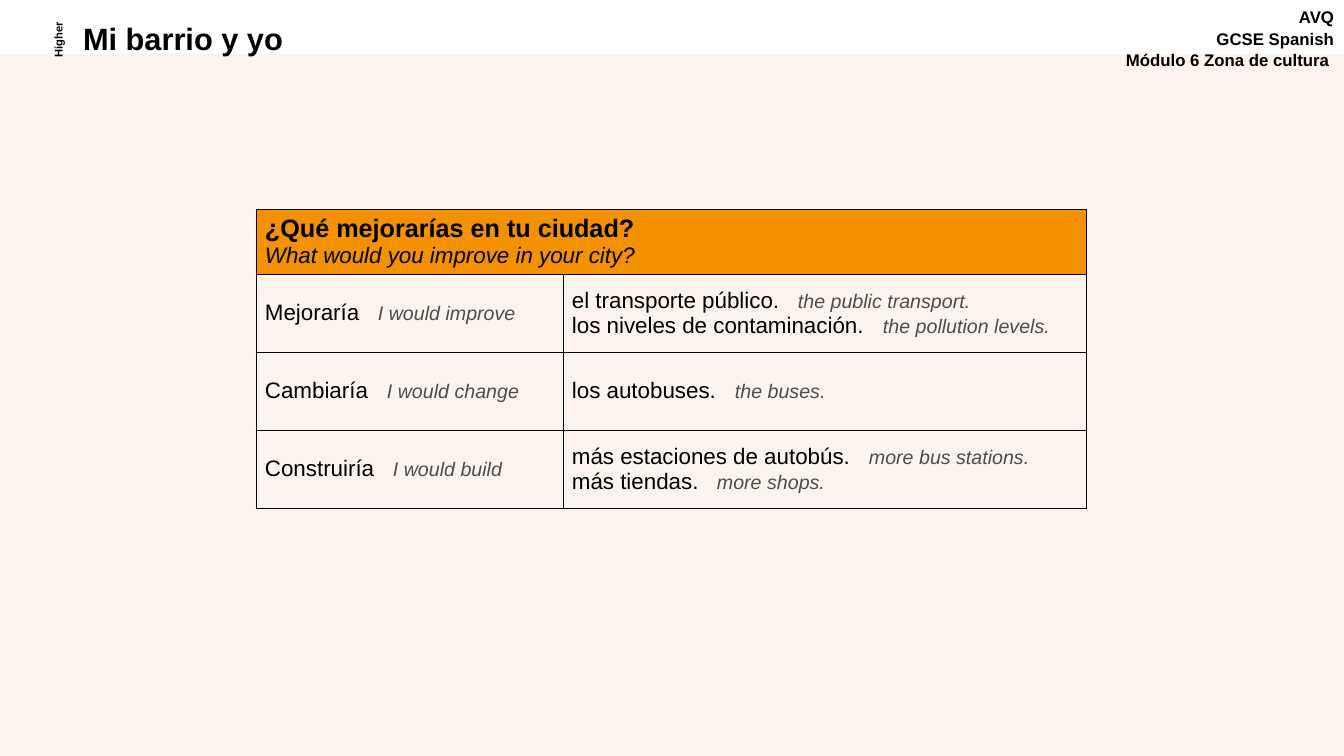
from lxml.etree import SubElement
from pptx import Presentation
from pptx.dml.color import RGBColor
from pptx.enum.shapes import MSO_SHAPE
from pptx.enum.text import MSO_ANCHOR, PP_ALIGN
from pptx.oxml.ns import qn
from pptx.util import Pt

EMU_PER_PX = 914400 / 100.8
BLACK, GREY, ORANGE, CREAM = "000000", "4D4D4C", "F39100", "FDF3ED"
TITLE = {"size": Pt(22), "bold": True}
COURSE = {"size": Pt(12), "bold": True}
TIER = {"size": Pt(8), "bold": True}
QUESTION = {"size": Pt(18), "bold": True}
QUESTION_ENGLISH = {"size": Pt(16), "bold": False, "italic": True}
SPANISH = {"size": Pt(16), "bold": False, "italic": False}
ENGLISH = {"size": Pt(14), "bold": False, "italic": True}

COLUMN_WIDTHS = [307, 524]
HEADER_HEIGHT, ROW_HEIGHT = 62, 78
HEADING = [
    ("¿Qué mejorarías en tu ciudad?", QUESTION),
    ("What would you improve in your city?", QUESTION_ENGLISH),
]
PHRASE_ROWS = [
    (
        [("Mejoraría", "I would improve", 113)],
        [
            ("el transporte público.", "the public transport.", 226),
            ("los niveles de contaminación.", "the pollution levels.", 311),
        ],
    ),
    (
        [("Cambiaría", "I would change", 122)],
        [("los autobuses.", "the buses.", 163)],
    ),
    (
        [("Construiría", "I would build", 128)],
        [
            ("más estaciones de autobús.", "more bus stations.", 297),
            ("más tiendas.", "more shops.", 145),
        ],
    ),
]


def px(length):
    return round(length * EMU_PER_PX)


def colour(hex_string):
    return RGBColor.from_string(hex_string)


def set_attributes(target, values):
    for name, value in values.items():
        setattr(target, name, value)


def place(shape, box):
    set_attributes(shape, dict(zip(("left", "top", "width", "height"), map(px, box))))


def add_run(paragraph, text, style, hex_string=BLACK):
    run = paragraph.add_run()
    run.text = text
    set_attributes(run.font, {"name": "Arial", **style})
    run.font.color.rgb = colour(hex_string)


def paragraphs_for(text_frame, items):
    for index, item in enumerate(items):
        paragraph = text_frame.add_paragraph() if index else text_frame.paragraphs[0]
        yield paragraph, item


def add_background(slide, box):
    panel = slide.shapes.add_shape(MSO_SHAPE.RECTANGLE, *map(px, box))
    panel.shadow.inherit = False
    panel.fill.solid()
    panel.fill.fore_color.rgb = colour(CREAM)
    panel.line.fill.background()
    panel.element.getparent().insert(2, panel.element)


def add_title(slide, box):
    title = slide.shapes.title
    place(title, box)
    set_attributes(title.text_frame, {"word_wrap": True, "vertical_anchor": MSO_ANCHOR.MIDDLE})
    paragraph = title.text_frame.paragraphs[0]
    set_attributes(paragraph, {"alignment": PP_ALIGN.LEFT, "line_spacing": 0.9})
    add_run(paragraph, "Mi barrio y yo", TITLE)


def add_label(slide, box, lines, style, alignment, rotation=0):
    label = slide.shapes.add_textbox(*map(px, box))
    label.rotation = rotation
    label.text_frame.word_wrap = True
    for paragraph, line in paragraphs_for(label.text_frame, lines):
        set_attributes(paragraph, {"alignment": alignment, "space_after": Pt(1)})
        add_run(paragraph, line, style)


def add_borders(cell):
    properties = cell._tc.get_or_add_tcPr()
    for side in ("lnL", "lnR", "lnT", "lnB"):
        line = SubElement(properties, qn(f"a:{side}"), w=str(Pt(0.75)))
        fill = SubElement(line, qn("a:solidFill"))
        SubElement(fill, qn("a:srgbClr"), val=BLACK)


def format_cell(cell, fill=None):
    margins = {"margin_left": px(9), "margin_right": px(9), "margin_top": px(4), "margin_bottom": px(4)}
    set_attributes(cell, {**margins, "vertical_anchor": MSO_ANCHOR.MIDDLE})
    add_borders(cell)
    if fill:
        cell.fill.solid()
        cell.fill.fore_color.rgb = colour(fill)
    else:
        cell.fill.background()


def add_tab_stop(paragraph, position):
    tab_list = SubElement(paragraph._p.get_or_add_pPr(), qn("a:tabLst"))
    SubElement(tab_list, qn("a:tab"), pos=str(px(position)), algn="l")


def fill_phrases(cell, phrases):
    for paragraph, (spanish, english, english_left) in paragraphs_for(cell.text_frame, phrases):
        add_tab_stop(paragraph, english_left)
        add_run(paragraph, f"{spanish}\t", SPANISH)
        add_run(paragraph, english, ENGLISH, GREY)


def add_phrase_table(slide, left, top):
    heights = [HEADER_HEIGHT] + [ROW_HEIGHT] * len(PHRASE_ROWS)
    box = (left, top, sum(COLUMN_WIDTHS), sum(heights))
    table = slide.shapes.add_table(len(heights), len(COLUMN_WIDTHS), *map(px, box)).table
    set_attributes(table, {"first_row": False, "horz_banding": False})
    for column, width in zip(table.columns, COLUMN_WIDTHS):
        column.width = px(width)
    for row, height in zip(table.rows, heights):
        row.height = px(height)

    for cell in table.rows[0].cells:
        format_cell(cell, ORANGE)
    heading = table.cell(0, 0)
    heading.merge(table.cell(0, 1))
    for paragraph, (text, style) in paragraphs_for(heading.text_frame, HEADING):
        add_run(paragraph, text, style)

    for row_index, phrase_cells in enumerate(PHRASE_ROWS, start=1):
        for column_index, phrases in enumerate(phrase_cells):
            cell = table.cell(row_index, column_index)
            format_cell(cell)
            fill_phrases(cell, phrases)


def add_culture_slide(presentation):
    slide = presentation.slides.add_slide(presentation.slide_layouts[5])
    add_background(slide, (0, 54, 1344, 702))
    add_title(slide, (73, 19, 693, 43))
    course_lines = ["AVQ", "GCSE Spanish", "Módulo 6 Zona de cultura "]
    add_label(slide, (1108, 2, 236, 80), course_lines, COURSE, PP_ALIGN.RIGHT)
    add_label(slide, (18, 29, 79, 22), ["Higher"], TIER, PP_ALIGN.CENTER, 270)
    add_phrase_table(slide, 256, 209)


def main():
    presentation = Presentation()
    set_attributes(presentation, {"slide_width": px(1344), "slide_height": px(756)})
    add_culture_slide(presentation)
    presentation.save("out.pptx")


if __name__ == "__main__":
    main()
